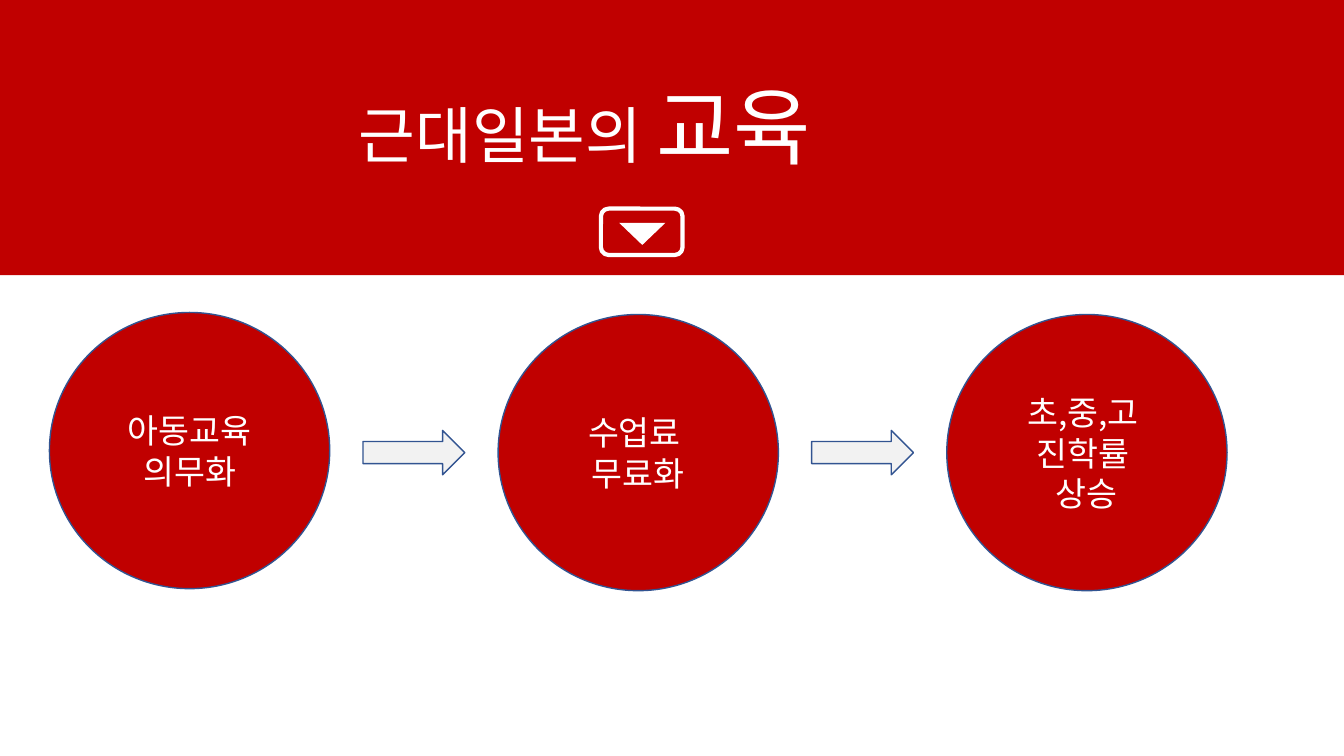
from pptx import Presentation
from pptx.dml.color import RGBColor
from pptx.enum.shapes import MSO_SHAPE
from pptx.enum.text import MSO_ANCHOR, MSO_AUTO_SIZE, PP_ALIGN
from pptx.oxml.ns import qn
from pptx.util import Inches, Pt

RECTANGLE, ROUNDED = MSO_SHAPE.RECTANGLE, MSO_SHAPE.ROUNDED_RECTANGLE
TRIANGLE, OVAL, ARROW = MSO_SHAPE.ISOSCELES_TRIANGLE, MSO_SHAPE.OVAL, MSO_SHAPE.RIGHT_ARROW
MIDDLE = MSO_ANCHOR.MIDDLE
FONT = "Noto Sans CJK KR"
COLORS = {"red": "C00000", "white": "FFFFFF", "outline": "325491", "arrow": "F2F2F2"}

prs = Presentation()
prs.slide_width, prs.slide_height = Inches(13.33), Inches(7.5)
slide = prs.slides.add_slide(prs.slide_layouts[5])


def add_figure(kind, box, fill=None, line=None, line_width=1):
    figure = slide.shapes.add_shape(kind, *map(Inches, box))
    figure.shadow.inherit = False
    if fill:
        figure.fill.solid()
        figure.fill.fore_color.rgb = RGBColor.from_string(COLORS[fill])
    else:
        figure.fill.background()
    if line:
        figure.line.color.rgb = RGBColor.from_string(COLORS[line])
        figure.line.width = Pt(line_width)
    else:
        figure.line.fill.background()
    return figure


def add_white_run(paragraph, text, size):
    run = paragraph.add_run()
    run.text = text
    run.font.size = Pt(size)
    run.font.name = FONT
    run.font.color.rgb = RGBColor.from_string(COLORS["white"])
    east_asian = run.font._element.makeelement(qn("a:ea"), {"typeface": FONT})
    run.font._element.find(qn("a:latin")).addnext(east_asian)


# Header band with the title in front of it
band = add_figure(RECTANGLE, (0, 0, 13.33, 2.73), "red")
title = slide.shapes.title
title.element.addprevious(band.element)
title.left, title.top, title.width, title.height = map(Inches, (2.63, 0.37, 10.18, 1.86))
title_format = {"vertical_anchor": MIDDLE, "auto_size": MSO_AUTO_SIZE.NONE,
                "word_wrap": True, "margin_left": Inches(0.93)}
for attribute, value in title_format.items():
    setattr(title.text_frame, attribute, value)
heading = title.text_frame.paragraphs[0]
heading.alignment = PP_ALIGN.LEFT
heading.line_spacing = 0.9
for text, size in (("근대일본의 ", 44), ("교육", 60)):
    add_white_run(heading, text, size)

# Down marker under the title
pointer = add_figure(TRIANGLE, (6.14, 2.21, 0.46, 0.22), "white")
pointer.rotation = 180
add_figure(ROUNDED, (5.96, 2.07, 0.81, 0.46), line="white", line_width=3)

# Three steps, with an arrow after each but the last
STEP_LEFT, STEP_PITCH, ARROW_OFFSET = 0.49, 4.45, 3.11
steps = [
    (3.1, ["아동교육 의무화"]),
    (3.12, ["수업료 ", "무료화"]),
    (3.12, ["초,중,고 ", "진학률 ", "상승"]),
]
for index, (top, lines) in enumerate(steps):
    left = STEP_LEFT + index * STEP_PITCH
    circle = add_figure(OVAL, (left, top, 2.78, 2.74), "red", "outline")
    frame = circle.text_frame
    frame.word_wrap = True
    frame.vertical_anchor = MIDDLE
    for number, line in enumerate(lines):
        paragraph = frame.add_paragraph() if number else frame.paragraphs[0]
        paragraph.alignment = PP_ALIGN.CENTER
        add_white_run(paragraph, line, 24)
    if index < len(steps) - 1:
        add_figure(ARROW, (left + ARROW_OFFSET, 4.27, 1.01, 0.44), "arrow", "outline")

prs.save("out.pptx")
